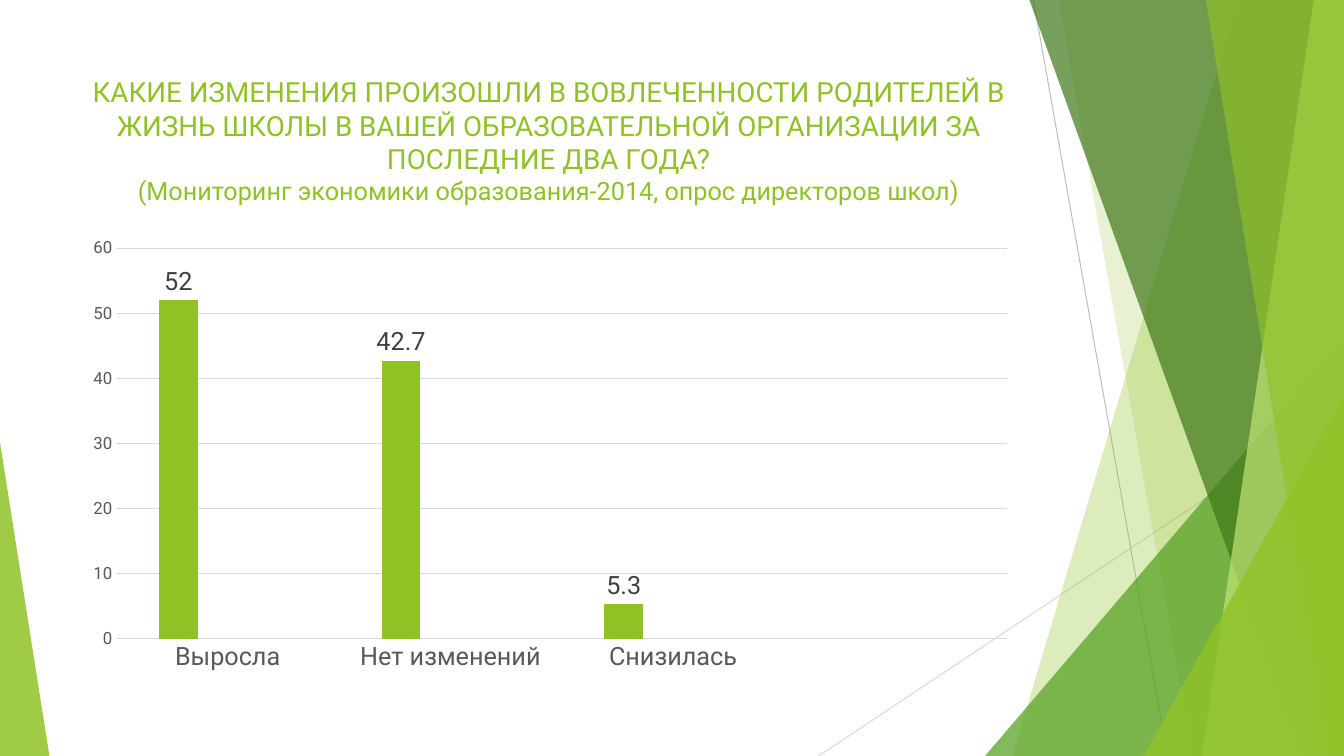
from dataclasses import dataclass

from lxml import etree
from pptx import Presentation
from pptx.chart import data as cd
from pptx.dml.color import RGBColor
from pptx.enum import chart as ce, shapes, text
from pptx.oxml import parse_xml
from pptx.oxml.ns import nsdecls, qn
from pptx.util import Inches, Pt


@dataclass(frozen=True)
class Theme:
    font: str = "Roboto"
    lime: str = "90C226"
    green: str = "54A021"
    forest: str = "3F7819"
    pale: str = "C0E474"
    gold: str = "E6B91E"
    rule: str = "D9D9D9"
    dark_rule: str = "BFBFBF"
    axis_text: str = "595959"
    label_text: str = "404040"
    title_size: float = 19.8
    body_size: float = 18
    tick_size: float = 12


class SlideBuilder:
    def __init__(self, prs, theme):
        self.theme = theme
        self.slide = prs.slides.add_slide(prs.slide_layouts[5])
        self.shapes = self.slide.shapes

    def style_font(self, font, size, color):
        font.name = self.theme.font
        font.size = Pt(size)
        font.bold = False
        font.color.rgb = RGBColor.from_string(color)

    def style_line(self, line, color):
        line.color.rgb = RGBColor.from_string(color)
        line.width = Pt(0.75)

    def paint(self, sp, color, opacity):
        sp.shadow.inherit = False
        sp.line.fill.background()
        sp.fill.solid()
        sp.fill.fore_color.rgb = RGBColor.from_string(color)
        clr = sp._element.spPr.find(".//" + qn("a:srgbClr"))
        etree.SubElement(clr, qn("a:alpha"), val=str(opacity * 1000))

    def line(self, x1, y1, x2, y2, color):
        ends = [Inches(v) for v in (x1, y1, x2, y2)]
        cxn = self.shapes.add_connector(shapes.MSO_CONNECTOR.STRAIGHT, *ends)
        self.style_line(cxn.line, color)
        etree.SubElement(cxn._element.spPr, qn("a:effectLst"))

    def facet(self, top_left, bottom_left, color, opacity):
        """A slanted panel that reaches the right edge of the slide."""
        points = [(Inches(x), Inches(y)) for x, y in
                  ((top_left, 0), (13.33, 0), (13.33, 7.5), (bottom_left, 7.5))]
        fb = self.shapes.build_freeform(*points[0])
        fb.add_line_segments(points[1:], close=True)
        self.paint(fb.convert_to_shape(), color, opacity)

    def triangle(self, x, y, w, h, apex, color, opacity):
        sp = self.shapes.add_shape(shapes.MSO_SHAPE.ISOSCELES_TRIANGLE,
                                   Inches(x), Inches(y), Inches(w), Inches(h))
        sp.adjustments[0] = apex
        self.paint(sp, color, opacity)

    def title(self, x, y, w, h, heading, source):
        sp = self.shapes.title
        sp.left, sp.top, sp.width, sp.height = (Inches(v) for v in (x, y, w, h))
        tf = sp.text_frame
        tf.text = heading + "\v" + source
        tf.word_wrap = True
        tf.auto_size = text.MSO_AUTO_SIZE.NONE
        tf.vertical_anchor = text.MSO_ANCHOR.MIDDLE
        p = tf.paragraphs[0]
        p.alignment = text.PP_ALIGN.CENTER
        for r, size in zip(p.runs, (self.theme.title_size, self.theme.body_size)):
            self.style_font(r.font, size, self.theme.lime)
        # The line break takes the heading size
        etree.SubElement(p._p.find(qn("a:br")), qn("a:rPr"),
                         sz=str(round(self.theme.title_size * 100)))
        self.shapes._spTree.append(sp._element)  # in front of the facets

    def column_chart(self, x, y, w, h, categories, series, plot_box):
        t = self.theme
        data = cd.CategoryChartData()
        data.categories = categories
        for name, values, _ in series:
            data.add_series(name, values)
        chart = self.shapes.add_chart(
            ce.XL_CHART_TYPE.COLUMN_CLUSTERED,
            Inches(x), Inches(y), Inches(w), Inches(h), data).chart
        chart.has_title = chart.has_legend = False
        self.style_font(chart.font, 10, "000000")

        # Columns
        plot = chart.plots[0]
        plot.vary_by_categories = False
        plot.gap_width, plot.overlap = 219, -27
        for ser, (_, _, color) in zip(plot.series, series):
            ser.format.fill.solid()
            ser.format.fill.fore_color.rgb = RGBColor.from_string(color)
        labels = plot.series[0].data_labels
        labels.show_value = True
        labels.position = ce.XL_LABEL_POSITION.OUTSIDE_END
        self.style_font(labels.font, t.body_size, t.label_text)

        # Axes
        cat, val = chart.category_axis, chart.value_axis
        for axis, size in ((cat, t.body_size), (val, t.tick_size)):
            axis.major_tick_mark = axis.minor_tick_mark = ce.XL_TICK_MARK.NONE
            self.style_font(axis.tick_labels.font, size, t.axis_text)
        self.style_line(cat.format.line, t.rule)
        val.format.line.fill.background()
        val.minimum_scale, val.maximum_scale, val.major_unit = 0, 60, 10
        val.has_major_gridlines = True
        self.style_line(val.major_gridlines.format.line, t.rule)

        # Fixed inner plot area
        area = chart._chartSpace.find(".//" + qn("c:plotArea"))
        for old in area.findall(qn("c:layout")):
            area.remove(old)
        sizes = "".join(f'<c:{k} val="{v}"/>' for k, v in zip("xywh", plot_box))
        area.insert(0, parse_xml(
            f'<c:layout {nsdecls("c")}><c:manualLayout><c:layoutTarget val="inner"/>'
            f'<c:xMode val="edge"/><c:yMode val="edge"/>{sizes}'
            '</c:manualLayout></c:layout>'))


def main():
    prs = Presentation()
    prs.slide_width, prs.slide_height = Inches(13.33), Inches(7.5)
    t = Theme()
    s = SlideBuilder(prs, t)

    # Faceted background
    s.line(10.25, 0, 11.58, 7.5, t.dark_rule)
    s.line(13.33, 4.03, 8.12, 7.5, t.rule)
    s.facet(12.28, 10.04, t.lime, 30)
    s.facet(10.5, 11.83, t.lime, 20)
    s.triangle(9.77, 3.33, 3.56, 4.17, 1, t.green, 72)
    s.facet(10.21, 12.91, t.forest, 70)
    s.facet(13.03, 11.92, t.pale, 70)
    s.facet(11.96, 13.18, t.lime, 65)
    s.triangle(11.34, 3.93, 1.99, 3.57, 1, t.lime, 80)
    s.triangle(0, 4.39, 0.49, 3.11, 0, t.lime, 85)

    # Title
    s.title(0.74, 0.67, 9.4, 1.44,
            "КАКИЕ ИЗМЕНЕНИЯ ПРОИЗОШЛИ В ВОВЛЕЧЕННОСТИ РОДИТЕЛЕЙ В ЖИЗНЬ ШКОЛЫ "
            "В ВАШЕЙ ОБРАЗОВАТЕЛЬНОЙ ОРГАНИЗАЦИИ ЗА ПОСЛЕДНИЕ ДВА ГОДА?",
            "(Мониторинг экономики образования-2014, опрос директоров школ)")

    # Survey chart: the fourth category and two series are empty
    empty = [None] * 4
    s.column_chart(0.74, 2.36, 9.4, 4.47,
                   ["Выросла", "Нет изменений", "Снизилась", ""],
                   [("Series 1", [52, 42.7, 5.3, None], t.lime),
                    ("Series 2", empty, t.green),
                    ("Series 3", empty, t.gold)],
                   (0.044, 0.023, 0.94, 0.867))

    prs.save("out.pptx")


if __name__ == "__main__":
    main()
